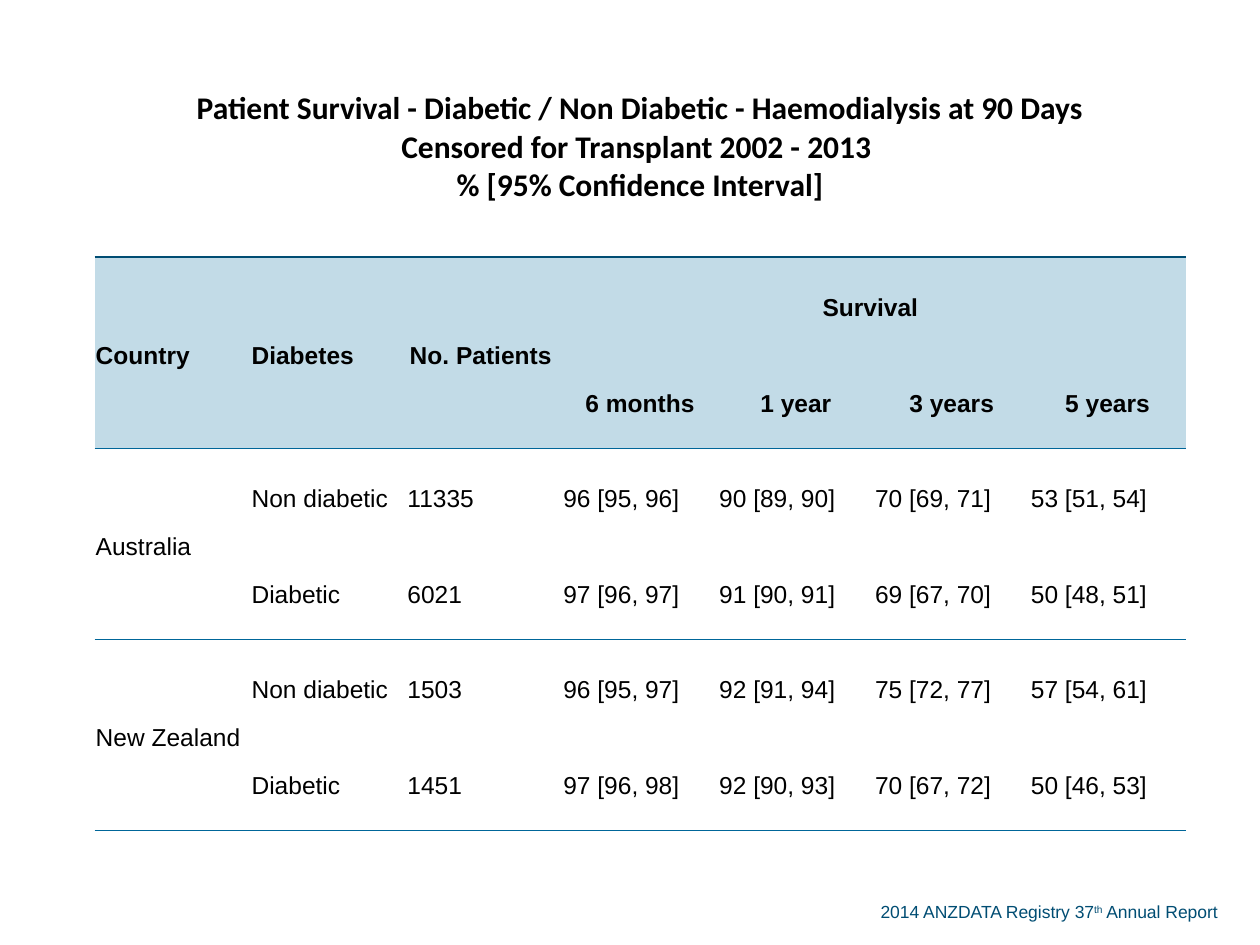
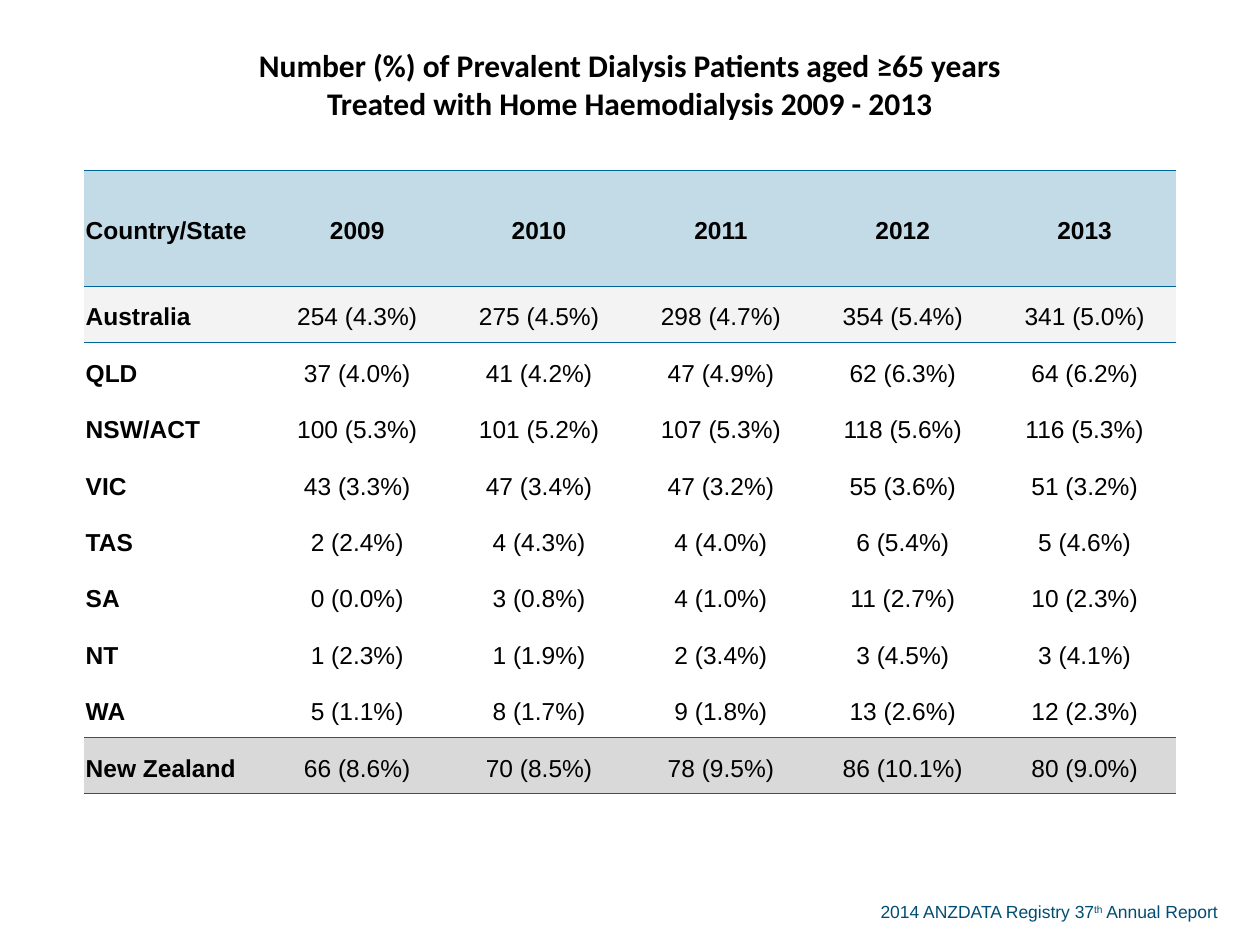
from lxml import etree
from pptx import Presentation
from pptx.dml.color import RGBColor
from pptx.enum.text import MSO_ANCHOR, PP_ALIGN
from pptx.oxml.ns import qn
from pptx.util import Inches, Pt

MIDDLE = MSO_ANCHOR.MIDDLE
LEFT, CENTER = PP_ALIGN.LEFT, PP_ALIGN.CENTER

WIDTH, HEIGHT = Inches(10), Inches(7.5)
BLACK, NAVY, BLUE = "000000", "004D73", "006699"
HEADER_FILL, PALE_GREY, GREY = "C2DBE7", "F3F3F3", "D9D9D9"
NO_GRID_STYLE = "{2D5ABB26-0587-4C30-8999-92F81FD0307C}"
THIN = (BLUE, 0.5)
THICK = (NAVY, 1)

SURVIVAL_TITLE = (
    "Patient Survival - Diabetic / Non Diabetic - Haemodialysis at 90 Days\n"
    "Censored for Transplant 2002 - 2013 \n"
    "% [95% Confidence Interval]"
)
SURVIVAL_ROWS = [
    ["Country", "Diabetes", "No. Patients ", "Survival ", "", "", ""],
    ["", "", "", "6 months", "1 year", "3 years", "5 years"],
    ["Australia", "Non diabetic", "11335", "96 [95, 96]", "90 [89, 90]", "70 [69, 71]", "53 [51, 54]"],
    ["", "Diabetic", "6021", "97 [96, 97]", "91 [90, 91]", "69 [67, 70]", "50 [48, 51]"],
    ["New Zealand", "Non diabetic", "1503", "96 [95, 97]", "92 [91, 94]", "75 [72, 77]", "57 [54, 61]"],
    ["", "Diabetic", "1451", "97 [96, 98]", "92 [90, 93]", "70 [67, 72]", "50 [46, 53]"],
]
SURVIVAL_MERGES = [
    (1, 0, 2, 0), (1, 1, 2, 1), (1, 2, 2, 2), (1, 3, 1, 6), (3, 0, 4, 0), (5, 0, 6, 0),
]

HOME_TITLE = (
    "Number (%) of Prevalent Dialysis Patients aged ≥65 years\n"
    "Treated with Home Haemodialysis 2009 - 2013"
)
HOME_ROWS = [
    ["Country/State", "2009", "2010", "2011", "2012", "2013"],
    ["Australia", "254 (4.3%)", "275 (4.5%)", "298 (4.7%)", "354 (5.4%)", "341 (5.0%)"],
    ["QLD", "37 (4.0%)", "41 (4.2%)", "47 (4.9%)", "62 (6.3%)", "64 (6.2%)"],
    ["NSW/ACT", "100 (5.3%)", "101 (5.2%)", "107 (5.3%)", "118 (5.6%)", "116 (5.3%)"],
    ["VIC", "43 (3.3%)", "47 (3.4%)", "47 (3.2%)", "55 (3.6%)", "51 (3.2%)"],
    ["TAS", "2 (2.4%)", "4 (4.3%)", "4 (4.0%)", "6 (5.4%)", "5 (4.6%)"],
    ["SA", "0 (0.0%)", "3 (0.8%)", "4 (1.0%)", "11 (2.7%)", "10 (2.3%)"],
    ["NT", "1 (2.3%)", "1 (1.9%)", "2 (3.4%)", "3 (4.5%)", "3 (4.1%)"],
    ["WA", "5 (1.1%)", "8 (1.7%)", "9 (1.8%)", "13 (2.6%)", "12 (2.3%)"],
    ["New Zealand", "66 (8.6%)", "70 (8.5%)", "78 (9.5%)", "86 (10.1%)", "80 (9.0%)"],
]


def color(hex_code):
    return RGBColor.from_string(hex_code)


def place(left, top, width, height):
    return (
        round(WIDTH * left / 100), round(HEIGHT * top / 100),
        round(WIDTH * width / 100), round(HEIGHT * height / 100),
    )


def add_run(p, text, font, size, hex_code, bold=False):
    r = p.add_run()
    r.text = text
    r.font.name, r.font.size, r.font.bold = font, Pt(size), bold
    r.font.color.rgb = color(hex_code)


def add_footer(s, layout, box):
    sp = s.shapes.add_textbox(*place(*box))
    sp.text_frame.word_wrap = True
    p = sp.text_frame.paragraphs[0]
    for text in ("2014 ANZDATA Registry 37", "th", " Annual Report"):
        add_run(p, text, "Arial", 10, NAVY)
    list(sp.element.iter(qn("a:rPr")))[1].set("baseline", "30000")
    layout.shapes.element.append(sp.element)


def add_border(cell, side, rule):
    tc_pr = cell._tc.get_or_add_tcPr()
    width = Pt(rule[1]) if rule else 0
    ln = etree.SubElement(tc_pr, qn(f"a:ln{side}"), w=str(width))
    if rule:
        fill = etree.SubElement(ln, qn("a:solidFill"))
        etree.SubElement(fill, qn("a:srgbClr"), val=rule[0])
    else:
        etree.SubElement(ln, qn("a:noFill"))


def style_cell(cell, above, below, fill):
    cell.margin_left = cell.margin_right = cell.margin_top = Inches(0.01)
    cell.margin_bottom = 0
    cell.vertical_anchor = MIDDLE
    for side, rule in (("L", None), ("R", None), ("T", above), ("B", below)):
        add_border(cell, side, rule)
    if fill:
        cell.fill.solid()
        cell.fill.fore_color.rgb = color(fill)
    else:
        cell.fill.background()


def write_title(cell, title):
    p = cell.text_frame.paragraphs[0]
    p.alignment = CENTER
    for i, line in enumerate(title.split("\n")):
        if i:
            p.add_line_break()
        add_run(p, line, "Calibri", 18, BLACK, True)


def write_value(cell, text, bold, centred):
    p = cell.text_frame.paragraphs[0]
    p.alignment = CENTER if centred else LEFT
    p.line_spacing = 1.19
    p.space_after = Pt(14)
    add_run(p, text, "Arial", 14, BLACK, bold)


def add_titled_table(s, box, title, rows, top_shares, rules, fills, is_bold, is_centred, merges=()):
    left, top, width, height = place(*box)
    n_rows, n_cols = len(rows) + 1, len(rows[0])
    frame = s.shapes.add_table(n_rows, n_cols, left, top, width, height)
    frame.element.find(".//" + qn("a:tableStyleId")).text = NO_GRID_STYLE
    table = frame.table
    table.first_row = table.horz_banding = False
    for column in table.columns:
        column.width = width // n_cols
    even_share = (100 - sum(top_shares)) / (n_rows - len(top_shares))
    shares = top_shares + [even_share] * (n_rows - len(top_shares))
    for row, share in zip(table.rows, shares):
        row.height = round(height * share / 100)
    for r1, c1, r2, c2 in [(0, 0, 0, n_cols - 1), *merges]:
        table.cell(r1, c1).merge(table.cell(r2, c2))
    for i in range(n_rows):
        for j in range(n_cols):
            cell = table.cell(i, j)
            last_row = i + cell.span_height - 1
            style_cell(cell, rules.get(i - 1), rules.get(last_row), fills.get(i))
            if i and rows[i - 1][j]:
                write_value(cell, rows[i - 1][j], is_bold(i, j), is_centred(i, j))
    write_title(table.cell(0, 0), title)


def survival_slide(s):
    add_titled_table(
        s, (7.5, 3.87, 86.6, 84), SURVIVAL_TITLE, SURVIVAL_ROWS, [27.8],
        rules={0: THICK, 2: THIN, 4: THIN, 6: THIN},
        fills={1: HEADER_FILL, 2: HEADER_FILL},
        is_bold=lambda i, j: i <= 2,
        is_centred=lambda i, j: i <= 2 and j >= 2,
        merges=SURVIVAL_MERGES,
    )


def home_dialysis_slide(s):
    add_titled_table(
        s, (6.7, 0, 86.6, 84), HOME_TITLE, HOME_ROWS, [21.43, 14.6],
        rules={0: THIN, 1: THIN, 2: THIN, 9: THIN, 10: THIN},
        fills={1: HEADER_FILL, 2: PALE_GREY, 10: GREY},
        is_bold=lambda i, j: i == 1 or j == 0,
        is_centred=lambda i, j: j >= 1,
    )


def main():
    prs = Presentation()
    prs.slide_width, prs.slide_height = WIDTH, HEIGHT
    layout = prs.slide_layouts[6]
    first, second = (prs.slides.add_slide(layout) for _ in range(2))
    add_footer(first, layout, (68.9, 94.67, 29.9, 3.6))
    survival_slide(first)
    home_dialysis_slide(second)
    prs.save("out.pptx")


if __name__ == "__main__":
    main()
